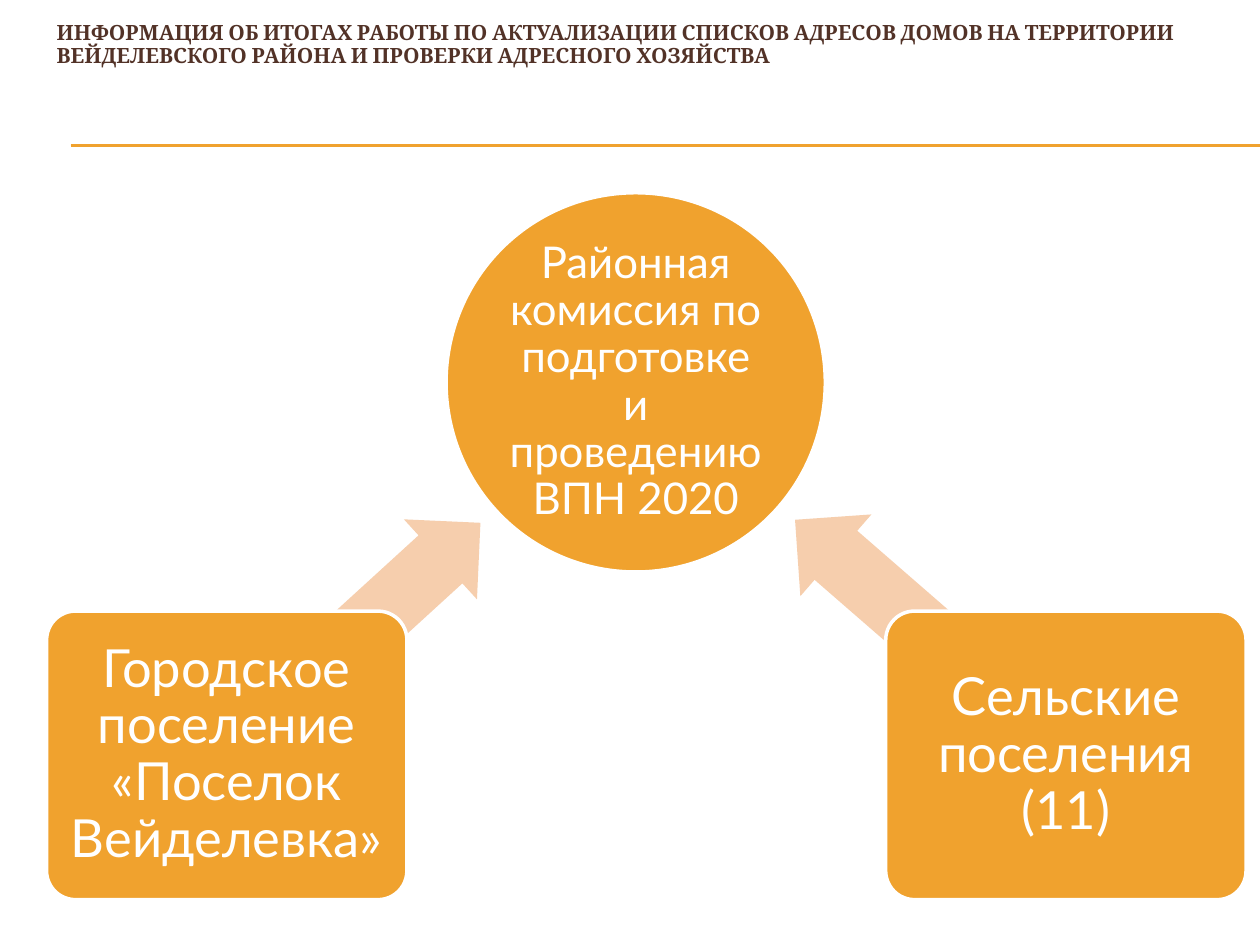
"""Build the slide on the district census commission and its settlements."""
from lxml import etree
from pptx import Presentation
from pptx import util as u
from pptx.dml.color import RGBColor
from pptx.enum import shapes, text
from pptx.oxml.ns import qn

COLORS = {"amber": "F0A22E", "peach": "F6CEAD", "brown": "523227", "white": "FFFFFF"}
TITLE = ("ИНФОРМАЦИЯ ОБ ИТОГАХ РАБОТЫ ПО АКТУАЛИЗАЦИИ СПИСКОВ АДРЕСОВ ДОМОВ "
         "НА ТЕРРИТОРИИ ВЕЙДЕЛЕВСКОГО РАЙОНА И ПРОВЕРКИ АДРЕСНОГО ХОЗЯЙСТВА")
COMMISSION = "Районная комиссия по подготовке и проведению ВПН 2020"
SETTLEMENTS = [
    ("Городское поселение «Поселок Вейделевка»", 0.37, (1.44, 4.64, 2.73, 0.86), 137.6),
    ("Сельские поселения (11)", 7.03, (5.96, 4.63, 2.85, 0.86), 41),
]
RULE_LEFT, RULE_TOPS = 0.56, (1.15, 1.16)
CIRCLE = (3.54, 1.53, 3.01, 3.01)
CARD_TOP, CARD_WIDTH, CARD_HEIGHT = 4.85, 2.86, 2.29


def color(name):
    return RGBColor.from_string(COLORS[name])


def apply(target, values):
    for name, value in values.items():
        setattr(target, name, value)


def write(shape, words, font, size, ink, align, bold=False, **margins):
    frame = shape.text_frame
    apply(frame, {"word_wrap": True, "auto_size": text.MSO_AUTO_SIZE.NONE,
                  "vertical_anchor": text.MSO_ANCHOR.MIDDLE})
    apply(frame, {f"margin_{side}": u.Inches(value) for side, value in margins.items()})
    para = frame.paragraphs[0]
    apply(para, {"alignment": align, "line_spacing": 0.9})
    span = para.add_run()
    span.text = words
    apply(span.font, {"name": font, "size": u.Pt(size), "bold": bold})
    span.font.color.rgb = color(ink)


def add_figure(page, kind, box, fill, edge=None, adjustments=()):
    shape = page.shapes.add_shape(kind, *map(u.Inches, box))
    shape.shadow.inherit = False
    shape.fill.solid()
    shape.fill.fore_color.rgb = color(fill)
    if edge:
        shape.line.color.rgb = color(edge)
        shape.line.width = u.Pt(2)
    else:
        shape.line.fill.background()
    for index, value in enumerate(adjustments):
        shape.adjustments[index] = value
    return shape


def add_label(shape, words, size, inset):
    write(shape, words, "Lato", size, "white", text.PP_ALIGN.CENTER,
          left=inset, top=inset, right=inset, bottom=inset)


def add_rule(page, top, right):
    rule = page.shapes.add_connector(shapes.MSO_CONNECTOR.STRAIGHT, u.Inches(RULE_LEFT),
                                     u.Inches(top), right, u.Inches(top))
    rule.line.color.rgb = color("amber")
    rule.line.width = u.Pt(0.75)
    properties = rule._element.find(qn("p:spPr"))
    etree.SubElement(properties, qn("a:effectLst"))


def main():
    deck = Presentation()
    apply(deck, {"slide_width": u.Inches(10), "slide_height": u.Inches(7.5)})
    page = deck.slides.add_slide(deck.slide_layouts[5])

    for top in RULE_TOPS:
        add_rule(page, top, deck.slide_width)

    title = page.shapes.title
    apply(title, {"left": u.Inches(0.35), "top": 0,
                  "width": u.Inches(9.5), "height": u.Inches(0.92)})
    write(title, TITLE, "Cambria", 12, "brown", text.PP_ALIGN.LEFT, bold=True, bottom=0.25)

    kinds = shapes.MSO_SHAPE
    circle = add_figure(page, kinds.OVAL, CIRCLE, "amber", "white")
    add_label(circle, COMMISSION, 25, 0.02)

    for words, left, arrow_box, angle in SETTLEMENTS:
        arrow = add_figure(page, kinds.LEFT_ARROW, arrow_box, "peach", adjustments=(0.6, 0.5))
        arrow.rotation = angle
        card = add_figure(page, kinds.ROUNDED_RECTANGLE,
                          (left, CARD_TOP, CARD_WIDTH, CARD_HEIGHT), "amber", "white", (0.1,))
        add_label(card, words, 30, 0.06)

    deck.save("out.pptx")


if __name__ == "__main__":
    main()
